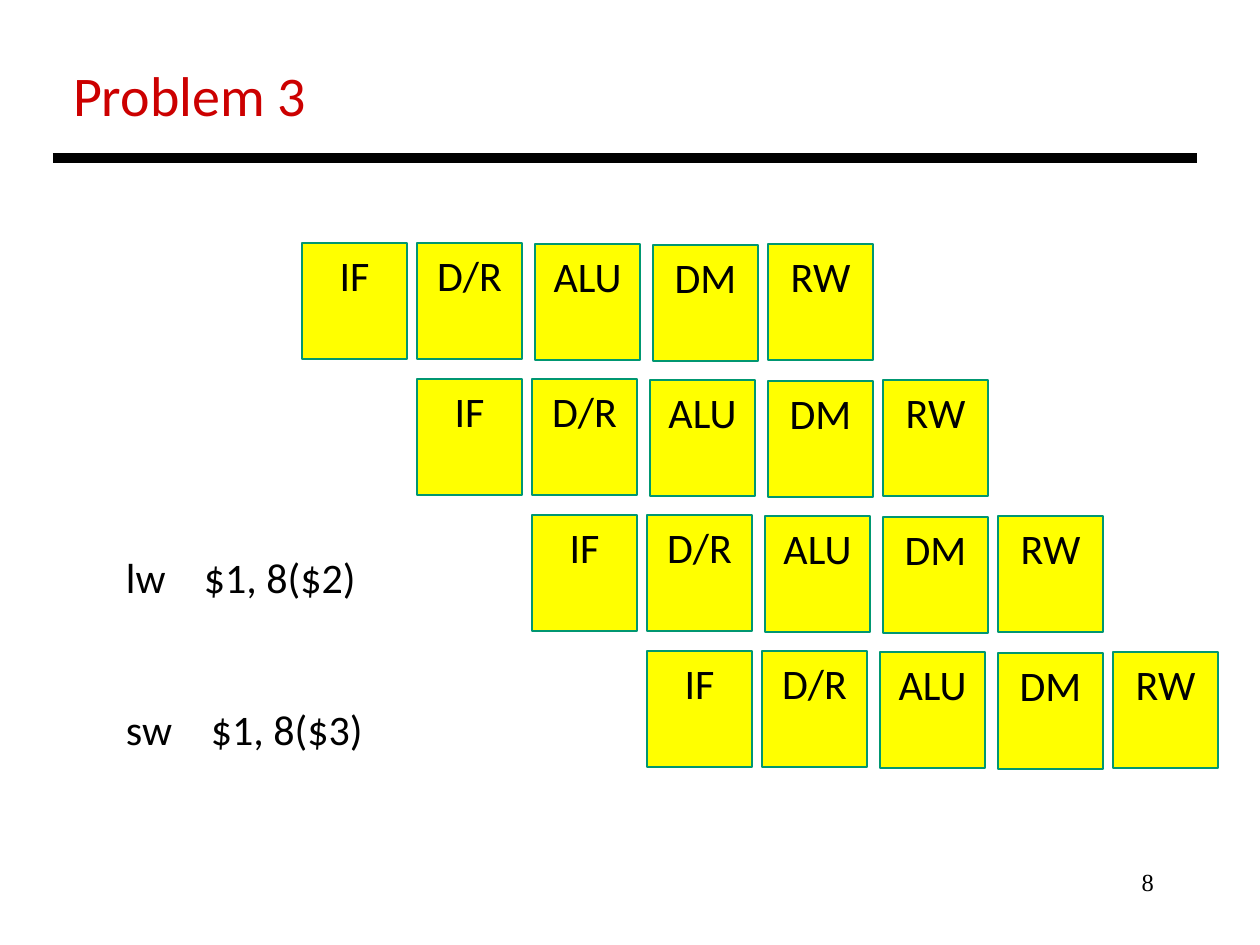
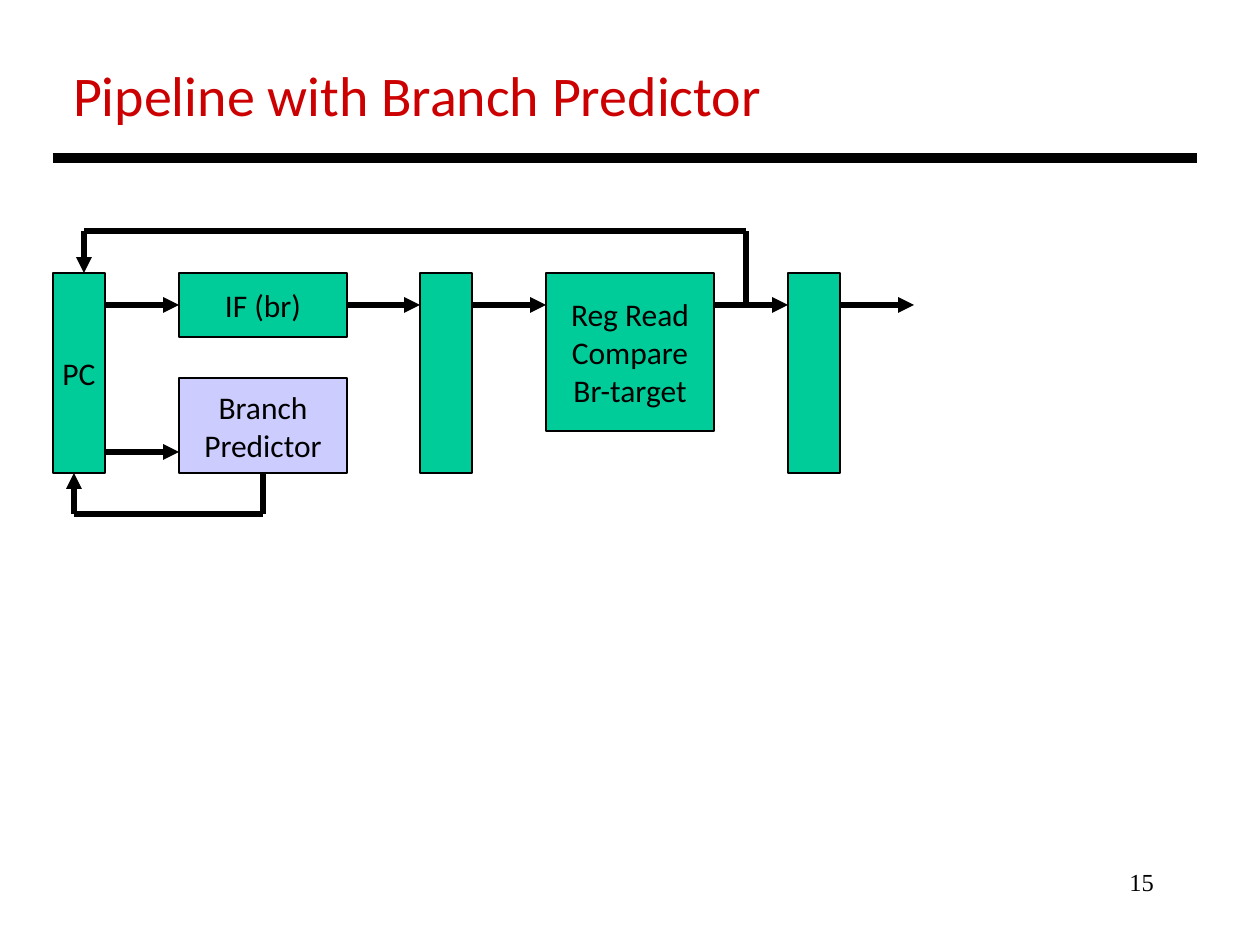
from dataclasses import dataclass
from typing import NamedTuple, Optional

from lxml.etree import SubElement
from pptx import Presentation
from pptx.dml.color import RGBColor
from pptx.enum.shapes import MSO_CONNECTOR as Conn, MSO_SHAPE as Geo
from pptx.enum.text import MSO_ANCHOR as Anchor, PP_ALIGN as Align
from pptx.oxml.ns import qn
from pptx.util import Emu, Pt

EMU_PER_PX = 914400 / 126
TOP, LEFT, BOTTOM, RIGHT = range(4)


@dataclass(frozen=True)
class Theme:
    ink: str = "000000"
    title: str = "CC0000"
    stage: str = "FFFF00"
    stage_edge: str = "009771"
    unit: str = "00CC99"
    predictor: str = "CCCCFF"
    font: str = "Calibri"
    number_font: str = "Times New Roman"
    title_pt: int = 32
    stage_pt: int = 24
    unit_pt: int = 18
    number_pt: int = 14
    rule_pt: float = 6
    wire_pt: float = 3
    stage_edge_pt: float = 1
    unit_edge_pt: float = 0.75


THEME = Theme()


class Box(NamedTuple):
    x: int
    y: int
    w: int
    h: int


class Stage(NamedTuple):
    label: str
    dx: int
    dy: int


class Instruction(NamedTuple):
    text: str
    tab: int


class Unit(NamedTuple):
    name: str
    box: Box
    lines: tuple[str, ...] = ()
    fill: str = THEME.unit


class Joint(NamedTuple):
    unit: str
    side: int


class Wire(NamedTuple):
    x1: int
    y1: int
    x2: int
    y2: int
    arrow: bool = False
    begin: Optional[Joint] = None
    end: Optional[Joint] = None


STAGES = (
    Stage("IF", 0, 0),
    Stage("D/R", 115, 0),
    Stage("ALU", 233, 1),
    Stage("DM", 351, 2),
    Stage("RW", 466, 1),
)
STAGE_ROWS = 4
FIRST_STAGE = Box(302, 243, 105, 116)
ROW_DX, ROW_DY = 115, 136

INSTRUCTIONS = (
    Instruction("lw\t$1, 8($2)", 78),
    Instruction("sw\t$1, 8($3)", 85),
)

FLOW_Y, FEEDBACK_Y, PREDICT_Y = 305, 231, 514
UNITS = (
    Unit("fetch", Box(179, 273, 168, 64), ("IF (br)",)),
    Unit("pc", Box(53, 273, 52, 200), ("PC",)),
    Unit("fetch latch", Box(420, 273, 52, 200)),
    Unit("decode", Box(546, 273, 168, 158), ("Reg Read", "Compare", "Br-target")),
    Unit("decode latch", Box(788, 273, 52, 200)),
    Unit("predictor", Box(179, 378, 168, 95), ("Branch", "Predictor"), THEME.predictor),
)
WIRES = (
    Wire(105, FLOW_Y, 179, FLOW_Y, True, end=Joint("fetch", LEFT)),
    Wire(347, FLOW_Y, 420, FLOW_Y, True, begin=Joint("fetch", RIGHT)),
    Wire(472, FLOW_Y, 546, FLOW_Y, True),
    Wire(714, FLOW_Y, 788, FLOW_Y, True),
    Wire(840, FLOW_Y, 914, FLOW_Y, True),
    # branch target back to the PC
    Wire(746, FLOW_Y, 746, FEEDBACK_Y),
    Wire(746, FEEDBACK_Y, 84, FEEDBACK_Y),
    Wire(84, FEEDBACK_Y, 84, 273, True),
    # predicted target back to the PC
    Wire(105, 452, 179, 452, True),
    Wire(263, 473, 263, PREDICT_Y, begin=Joint("predictor", BOTTOM)),
    Wire(263, PREDICT_Y, 74, PREDICT_Y),
    Wire(74, PREDICT_Y, 74, 473, True),
)


def px(n: float) -> Emu:
    return Emu(round(n * EMU_PER_PX))


def rgb(code: str) -> RGBColor:
    return RGBColor.from_string(code)


def write(tf, lines, size: int, color: str = THEME.ink, font: str = THEME.font,
          align=Align.LEFT, anchor=Anchor.TOP, wrap: bool = False,
          inset: tuple[int, int] = (0, 0)) -> None:
    """Fill a text frame, one paragraph a line; inset is (sides, top and bottom)."""
    tf.word_wrap = wrap
    tf.vertical_anchor = anchor
    tf.margin_left = tf.margin_right = px(inset[0])
    tf.margin_top = tf.margin_bottom = px(inset[1])
    for i, line in enumerate(lines):
        p = tf.paragraphs[0] if i == 0 else tf.add_paragraph()
        p.alignment = align
        p.add_run().text = line
        p.font.size = Pt(size)
        p.font.name = font
        p.font.color.rgb = rgb(color)


def add_text(s, box: Box, lines, size: int, **style):
    tf = s.shapes.add_textbox(*map(px, box)).text_frame
    write(tf, lines, size, **style)
    return tf


def add_rect(s, box: Box, fill: str, edge: str, edge_pt: float):
    sp = s.shapes.add_shape(Geo.RECTANGLE, *map(px, box))
    sp.shadow.inherit = False
    sp.fill.solid()
    sp.fill.fore_color.rgb = rgb(fill)
    sp.line.color.rgb = rgb(edge)
    sp.line.width = Pt(edge_pt)
    return sp


def add_wire(s, wire: Wire, width: float, shapes=None) -> None:
    c = s.shapes.add_connector(Conn.STRAIGHT, *map(px, wire[:4]))
    c.line.color.rgb = rgb(THEME.ink)
    c.line.width = Pt(width)
    if wire.arrow:
        SubElement(c.line._get_or_add_ln(), qn("a:tailEnd"), type="triangle")
    SubElement(c._element.spPr, qn("a:effectLst"))
    if wire.begin:
        c.begin_connect(shapes[wire.begin.unit], wire.begin.side)
    if wire.end:
        c.end_connect(shapes[wire.end.unit], wire.end.side)


def set_tab(p, position: int) -> None:
    tabs = SubElement(p._p.get_or_add_pPr(), qn("a:tabLst"))
    SubElement(tabs, qn("a:tab"), pos=str(px(position)), algn="l")
    # the schema wants the tab list ahead of the default run properties
    tabs.getparent().insert_element_before(tabs, "a:defRPr", "a:extLst")


def new_slide(prs, title: str, number: int):
    """Add a blank slide with the title, rule and page number all slides share."""
    s = prs.slides.add_slide(prs.slide_layouts[6])
    add_text(s, Box(904, 861, 262, 63), [str(number)], THEME.number_pt,
             font=THEME.number_font, align=Align.RIGHT, wrap=True, inset=(12, 6))
    add_text(s, Box(61, 54, 1050, 81), [title], THEME.title_pt,
             color=THEME.title, wrap=True, inset=(12, 6))
    add_wire(s, Wire(53, 158, 1197, 158), THEME.rule_pt)
    return s


def build_problem(prs) -> None:
    s = new_slide(prs, "Problem 3", 8)
    x, y, w, h = FIRST_STAGE
    for row in range(STAGE_ROWS):
        for stage in STAGES:
            box = Box(x + row * ROW_DX + stage.dx, y + row * ROW_DY + stage.dy, w, h)
            sp = add_rect(s, box, THEME.stage, THEME.stage_edge, THEME.stage_edge_pt)
            write(sp.text_frame, [stage.label], THEME.stage_pt,
                  align=Align.CENTER, inset=(0, 7))
    tf = add_text(s, Box(126, 546, 253, 217), [i.text for i in INSTRUCTIONS],
                  THEME.stage_pt, inset=(0, 6))
    for p, instruction in zip(tf.paragraphs, INSTRUCTIONS):
        set_tab(p, instruction.tab)
    tf.paragraphs[1].space_before = Pt(58)


def build_predictor(prs) -> None:
    s = new_slide(prs, "Pipeline with Branch Predictor", 15)
    shapes = {}
    for unit in UNITS:
        sp = add_rect(s, unit.box, unit.fill, THEME.ink, THEME.unit_edge_pt)
        write(sp.text_frame, unit.lines, THEME.unit_pt,
              align=Align.CENTER, anchor=Anchor.MIDDLE)
        shapes[unit.name] = sp
    for wire in WIRES:
        add_wire(s, wire, THEME.wire_pt, shapes)


def main() -> None:
    prs = Presentation()
    prs.slide_width, prs.slide_height = px(1260), px(945)
    build_problem(prs)
    build_predictor(prs)
    prs.save("out.pptx")


if __name__ == "__main__":
    main()
